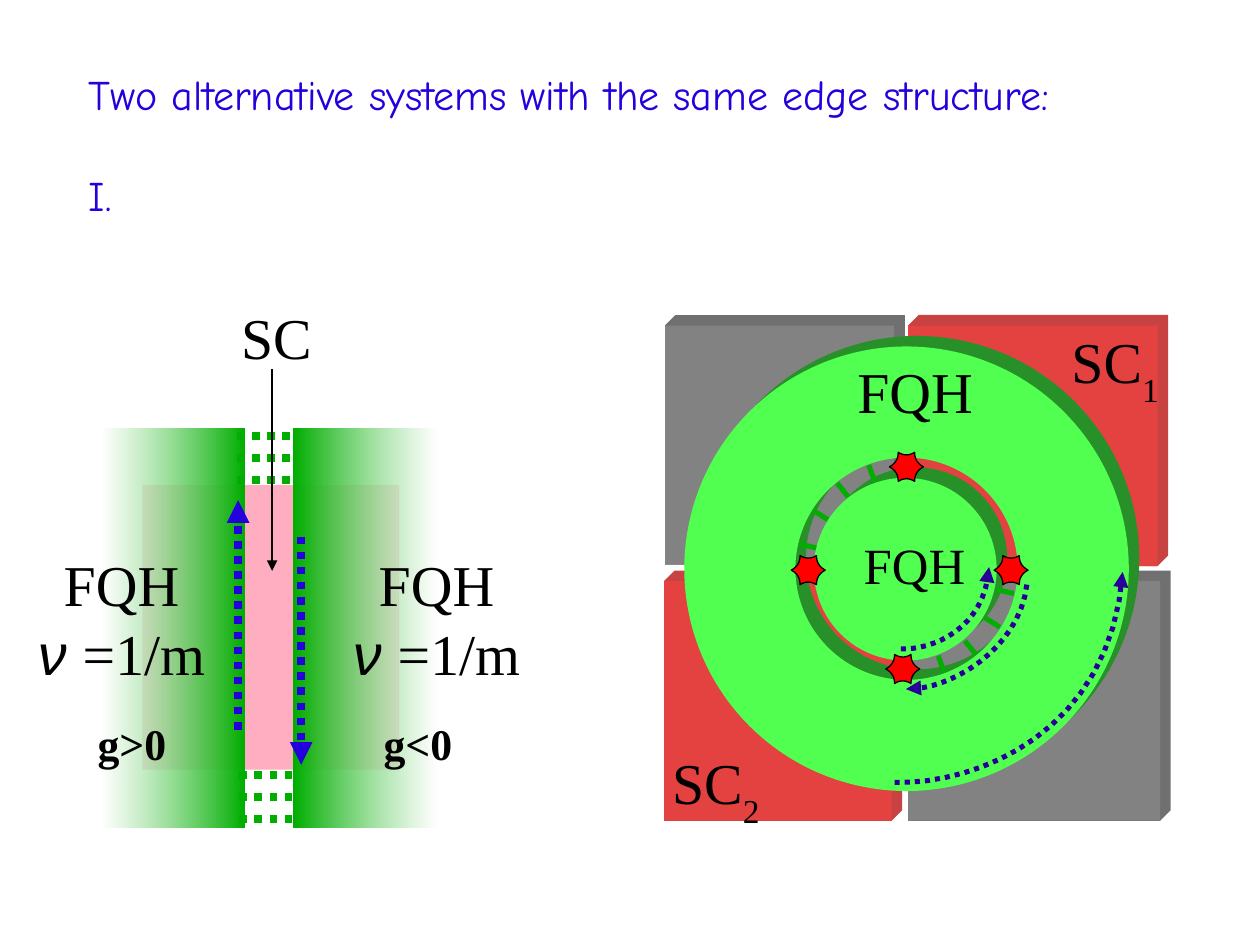
import math
from dataclasses import dataclass

import pptx
import pptx.dml.color
import pptx.enum.dml
import pptx.enum.shapes
import pptx.enum.text
import pptx.oxml
import pptx.oxml.ns
import pptx.util

Pt = pptx.util.Pt
SHAPE = pptx.enum.shapes.MSO_SHAPE
ALIGN = pptx.enum.text.PP_ALIGN


@dataclass(frozen=True)
class Theme:
    title_font: str = "Comic Neue"
    body_font: str = "Times New Roman"
    symbol_font: str = "Arial"
    title_size: float = 24
    label_size: float = 33
    disc_size: float = 29
    coupling_size: float = 25
    blue: str = "2300DC"
    indigo: str = "280099"
    black: str = "000000"
    white: str = "FFFFFF"
    pink: str = "FF3366"
    star_red: str = "FF0000"
    edge_green: str = "00AE00"
    ring_green: str = "50FF50"
    ring_side: str = "289028"
    gray: str = "828282"
    gray_side: str = "707070"
    red: str = "E44141"
    red_side: str = "C84242"
    thin: float = 0.75
    medium: float = 2.89
    thick: float = 4.31
    depth: float = 6


def rgb(code):
    return pptx.dml.color.RGBColor.from_string(code)


def add_xml(parent, tag, **attributes):
    child = pptx.oxml.parse_xml(f"<a:{tag} {pptx.oxml.ns.nsdecls('a')}/>")
    for key, value in attributes.items():
        child.set(key, value)
    parent.append(child)


def set_alpha(holder, percent):
    """Make the colours inside an XML element partly opaque."""
    for color in holder.iter(pptx.oxml.ns.qn("a:srgbClr")):
        add_xml(color, "alpha", val=str(percent * 1000))


def bezier(controls, steps=16):
    """Sample a Bezier curve of any degree."""
    degree = len(controls) - 1
    samples = []
    for step in range(steps + 1):
        t = step / steps
        weights = [math.comb(degree, i) * t**i * (1 - t) ** (degree - i)
                   for i in range(degree + 1)]
        samples.append(tuple(sum(w * p[axis] for w, p in zip(weights, controls))
                             for axis in (0, 1)))
    return samples


class SlideBuilder:
    def __init__(self, slide, theme):
        self.slide, self.theme = slide, theme

    def title(self, lines, left, top, width, height, gap):
        heading = self.slide.shapes.title
        heading.left, heading.top, heading.width, heading.height = map(
            Pt, (left, top, width, height))
        self._frame(heading.text_frame, True)
        for i, line in enumerate(lines):
            paragraph = self._paragraph(heading.text_frame, i, self.theme.title_size,
                                        self.theme.title_font, self.theme.blue)
            paragraph.add_run().text = line
            paragraph.space_before = Pt(gap if i else 0)

    def text(self, lines, left, top, width, height, size=None, bold=False,
             align=ALIGN.LEFT, wrap=False):
        """Each line is a list of (text, kind) runs; kind is "", "sub" or "symbol"."""
        box = self.slide.shapes.add_textbox(*map(Pt, (left, top, width, height)))
        self._frame(box.text_frame, wrap)
        for i, runs in enumerate(lines):
            paragraph = self._paragraph(box.text_frame, i, size or self.theme.label_size,
                                        self.theme.body_font, self.theme.black)
            paragraph.alignment = align
            paragraph.font.bold = bold
            for words, kind in runs:
                run = paragraph.add_run()
                run.text = words
                if kind == "sub":
                    run._r.get_or_add_rPr().set("baseline", "-33000")
                elif kind == "symbol":
                    run.font.name, run.font.italic = self.theme.symbol_font, True

    def _frame(self, frame, wrap):
        frame.word_wrap = wrap
        frame.auto_size = pptx.enum.text.MSO_AUTO_SIZE.NONE
        frame.vertical_anchor = pptx.enum.text.MSO_ANCHOR.TOP
        frame.margin_left = frame.margin_right = Pt(6.8)
        frame.margin_top = frame.margin_bottom = Pt(3.3)

    def _paragraph(self, frame, index, size, font, color):
        paragraph = frame.add_paragraph() if index else frame.paragraphs[0]
        paragraph.alignment = ALIGN.LEFT
        paragraph.font.size, paragraph.font.name = Pt(size), font
        paragraph.font.color.rgb = rgb(color)
        return paragraph

    def shape(self, preset, left, top, width, height, color, alpha=None, adjust=None):
        item = self.slide.shapes.add_shape(preset, *map(Pt, (left, top, width, height)))
        if adjust is not None:
            item.adjustments[0] = adjust
        self._paint(item, color)
        if alpha:
            set_alpha(item._element.spPr, alpha)

    def fade(self, left, top, width, height, angle):
        item = self.slide.shapes.add_shape(SHAPE.RECTANGLE,
                                           *map(Pt, (left, top, width, height)))
        item.shadow.inherit = False
        item.line.fill.background()
        item.fill.gradient()
        item.fill.gradient_angle = angle
        stops = item.fill.gradient_stops
        for stop, color, position in zip(stops, (self.theme.edge_green, self.theme.white),
                                         (0, 1)):
            stop.color.rgb, stop.position = rgb(color), position
        set_alpha(stops[1]._gs, 70)

    def outline(self, points, fill=None, line=None, width=0, closed=True):
        corners = [(Pt(x), Pt(y)) for x, y in points]
        builder = self.slide.shapes.build_freeform(*corners[0], scale=1.0)
        builder.add_line_segments(corners[1:], close=closed)
        item = builder.convert_to_shape()
        self._paint(item, fill, line, width)
        return item

    def tile(self, left, top, width, height, color, side):
        """Square block whose sides recede up and to the right."""
        d, right, bottom = self.theme.depth, left + width, top + height
        self.outline([(left, top), (left + d, top - d), (right + d, top - d),
                      (right + d, bottom - d), (right, bottom), (left, bottom)], side)
        self.shape(SHAPE.RECTANGLE, left, top, width, height, color)

    def round_block(self, preset, left, top, size, adjust=None):
        d = self.theme.depth
        for shift, color in ((d, self.theme.ring_side), (0, self.theme.ring_green)):
            self.shape(preset, left + shift, top - shift, size, size, color, adjust=adjust)

    def star(self, x, y):
        """Six tips joined by arcs that bend towards the centre."""
        tips = [(9.7, 0), (4.7, 8.3), (-4.7, 8.3), (-9.7, 0), (-4.7, -8.3), (4.7, -8.3)]
        rim = []
        for a, b in zip(tips, tips[1:] + tips[:1]):
            bend = tuple(0.32 * (p + q) for p, q in zip(a, b))
            rim += bezier([a, bend, b], 6)[:-1]
        self.outline([(x + dx, y + dy) for dx, dy in rim], self.theme.star_red,
                     self.theme.black, self.theme.thin)

    def curved_arrow(self, controls):
        item = self.outline(bezier(controls), None, self.theme.indigo,
                            self.theme.medium, closed=False)
        self._finish_line(item.line, dotted=True, arrow=True)

    def line(self, start, end, color, width, dotted=False, arrow=False):
        item = self.slide.shapes.add_connector(
            pptx.enum.shapes.MSO_CONNECTOR.STRAIGHT, *map(Pt, (*start, *end)))
        item.line.color.rgb, item.line.width = rgb(color), Pt(width)
        self._finish_line(item.line, dotted, arrow)
        add_xml(item._element.spPr, "effectLst")

    def _finish_line(self, line, dotted, arrow):
        if dotted:
            line.dash_style = pptx.enum.dml.MSO_LINE.ROUND_DOT
        if arrow:
            add_xml(line._get_or_add_ln(), "tailEnd", type="triangle")

    def _paint(self, item, fill, line=None, width=0):
        item.shadow.inherit = False
        if fill:
            item.fill.solid()
            item.fill.fore_color.rgb = rgb(fill)
        else:
            item.fill.background()
        if line:
            item.line.color.rgb, item.line.width = rgb(line), Pt(width)
        else:
            item.line.fill.background()


def draw_ring(b, theme):
    b.tile(380, 186, 131, 136.6, theme.gray, theme.gray_side)
    b.tile(519, 332, 144, 137, theme.gray, theme.gray_side)
    b.tile(379.5, 332, 130, 137, theme.red, theme.red_side)
    b.tile(519, 186, 142.5, 137.5, theme.red, theme.red_side)
    b.round_block(SHAPE.DONUT, 391, 198, 254, adjust=0.25)
    b.text([[("FQH", "")]], 483.1, 200.2, 78.5, 42.5)
    b.round_block(SHAPE.OVAL, 465, 273, 104.5)
    b.text([[("FQH", "")]], 486.7, 301.7, 70.6, 38.2, theme.disc_size)
    for number, left, top in (("1", 605.5, 182.9), ("2", 377.3, 423.4)):
        b.text([[("SC", ""), (number, "sub")]], left, top, 64, 49.7)
    for center in ((518, 266.8), (577.8, 325.8), (515.9, 382.3), (461.9, 325.8)):
        b.star(*center)
    b.curved_arrow([(511.2, 447.1), (557.3, 448.6), (635, 419), (641.5, 326.9)])
    b.curved_arrow([(514.8, 370.8), (532.1, 371.5), (563, 360), (565.2, 324)])
    b.curved_arrow([(586.8, 334.1), (582.5, 371.5), (542.2, 394.6), (517.7, 393.8)])
    for first in (193, 13):
        for k in range(4):
            angle = math.radians(first + 19 * k)
            inner, outer = [(518 + r * math.cos(angle), 325 + r * math.sin(angle))
                            for r in (53, 63)]
            b.line(outer, inner, theme.edge_green, theme.medium)


def draw_strip(b, theme):
    b.fade(167.8, 244.8, 81.4, 228.2, 0)
    b.fade(58.3, 244.8, 81.4, 228.2, 180)
    filling = [[("FQH", "")], [("ν ", "symbol"), ("=1/m", "")]]
    for left in (15.8, 195.8):
        b.text(filling, left, 310.3, 107.3, 79.2, align=ALIGN.CENTER)
    for x, start, end in ((136.1, 416.9, 285.8), (172.1, 306.7, 437)):
        b.line((x, start), (x, end), theme.blue, theme.thick, dotted=True, arrow=True)
    for coupling, left in (("g>0", 49), ("g<0", 212.4)):
        b.text([[(coupling, "")]], left, 406, 81.4, 34.6, theme.coupling_size,
               bold=True, wrap=True)
    for left, top in ((136.8, 442.8), (135.4, 249.1)):
        for k in range(3):
            y = top + 12.6 * k
            b.line((left, y), (left + 32.4, y), theme.edge_green, theme.thick, dotted=True)
    b.text([[("SC", "")]], 131, 169.2, 81.4, 61.9, wrap=True)
    b.line((155.5, 211), (155.5, 326.2), theme.black, theme.thin, arrow=True)


def main():
    deck = pptx.Presentation()
    deck.slide_width, deck.slide_height = Pt(720), Pt(540)
    theme = Theme()
    b = SlideBuilder(deck.slides.add_slide(deck.slide_layouts[5]), theme)
    b.shape(SHAPE.RECTANGLE, 81.4, 277.2, 146.9, 162.7, theme.pink, alpha=40)
    b.title(["Two alternative systems with the same edge structure:", "I."],
            44, 36, 653.8, 43.2, gap=29)
    draw_ring(b, theme)
    draw_strip(b, theme)
    deck.save("out.pptx")


if __name__ == "__main__":
    main()
